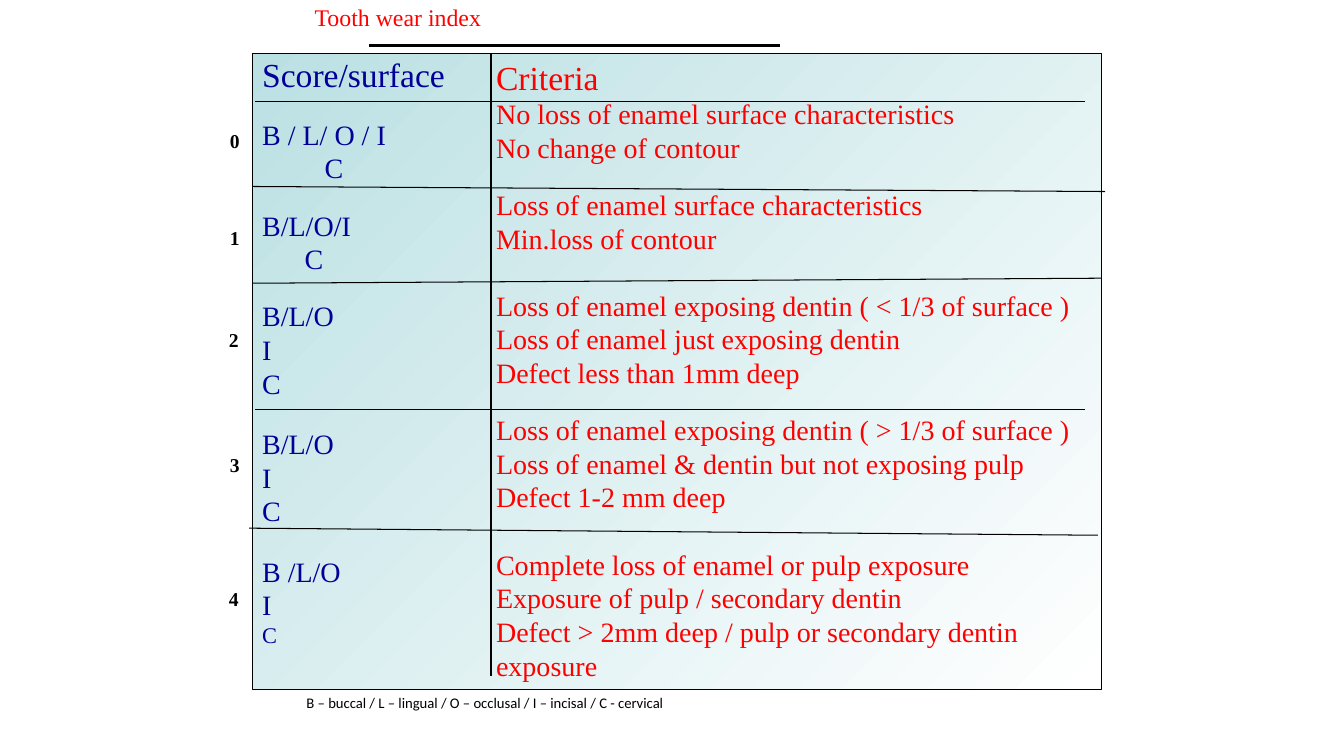
"""Build the tooth wear index slide: scores, surfaces and criteria."""
from dataclasses import dataclass

from lxml import etree
from pptx import Presentation
from pptx.dml.color import RGBColor
from pptx.enum.shapes import MSO_CONNECTOR, MSO_SHAPE
from pptx.enum.text import MSO_ANCHOR, MSO_AUTO_SIZE, PP_ALIGN
from pptx.oxml.ns import qn
from pptx.util import Pt

RECT = MSO_SHAPE.RECTANGLE
STRAIGHT = MSO_CONNECTOR.STRAIGHT
TOP, LEFT, NO_FIT = MSO_ANCHOR.TOP, PP_ALIGN.LEFT, MSO_AUTO_SIZE.NONE
PX = 9144
TWO_CONTENT = 3
LINE_FACTOR = 1.2


@dataclass(frozen=True)
class Theme:
    serif: str = "Times New Roman"
    sans: str = "Calibri"
    red: str = "FF0000"
    navy: str = "000099"
    black: str = "000000"
    tint: str = "BBE0E3"
    white: str = "FFFFFF"
    title: float = 17
    head: float = 24
    body: float = 20
    small: float = 16
    score: float = 14
    note: float = 10.5
    thin: float = 0.75
    thick: float = 2.25


T = Theme()

# Each line is (text, size, gap size before, left indent in px).
TITLE = [("Tooth wear index", T.title, 0, 0)]
SURFACES = [
    ("Score/surface", T.head, 0, 0),
    ("B / L/ O / I", T.body, 14, 0),
    ("C", T.body, 0, 62),
    ("B/L/O/I", T.body, 14, 0),
    ("C", T.body, 0, 42),
    ("B/L/O", T.body, 14, 0),
    ("I", T.body, 0, 0),
    ("C", T.body, 0, 0),
    ("B/L/O", T.body, 16, 0),
    ("I", T.body, 0, 0),
    ("C", T.body, 0, 0),
    ("B /L/O", T.body, 16, 0),
    ("I", T.body, 0, 0),
    ("C", T.small, 0, 0),
]
CRITERIA = [
    ("Criteria", T.head, 0, 0),
    ("No loss of enamel surface characteristics", T.body, 0, 0),
    ("No change of contour", T.body, 0, 0),
    ("Loss of enamel surface characteristics", T.body, 14, 0),
    ("Min.loss of contour", T.body, 0, 0),
    ("Loss of enamel exposing dentin ( < 1/3 of surface )", T.body, 20, 0),
    ("Loss of enamel just exposing dentin", T.body, 0, 0),
    ("Defect less than 1mm deep", T.body, 0, 0),
    ("Loss of enamel exposing dentin ( > 1/3 of surface )", T.body, 14, 0),
    ("Loss of enamel & dentin but not exposing pulp", T.body, 0, 0),
    ("Defect 1-2 mm deep", T.body, 0, 0),
    ("Complete loss of enamel or pulp exposure", T.body, 20, 0),
    ("Exposure of pulp / secondary dentin", T.body, 0, 0),
    ("Defect > 2mm deep / pulp or secondary dentin exposure", T.body, 0, 0),
]
KEY = [("B – buccal / L – lingual / O – occlusal / I – incisal / C - cervical",
        T.note, 0, 0)]
SCORES = [(222, 125), (222, 221), (221, 322), (222, 446), (221, 579)]
RULES = [
    (366, 45, 774, 45, T.thick),
    (487, 53, 487, 671, T.thin),
    (253, 101, 1076, 101, T.thin),
    (251, 185, 1096, 190, T.thin),
    (251, 281, 1092, 276, T.thin),
    (253, 406, 1076, 406, T.thin),
    (247, 524, 1089, 531, T.thin),
]


def rgb(color):
    return RGBColor.from_string(color)


def px(*lengths):
    return [n * PX for n in lengths]


def write(sp, box, lines, color, font=T.serif, bold=False):
    sp.left, sp.top, sp.width, sp.height = px(*box)
    tf = sp.text_frame
    tf.text = "\n".join(line[0] for line in lines)
    tf.word_wrap, tf.auto_size, tf.vertical_anchor = True, NO_FIT, TOP
    tf.margin_left = tf.margin_right = 6 * PX
    tf.margin_top = tf.margin_bottom = 3 * PX
    for p, (_, size, gap, indent) in zip(tf.paragraphs, lines):
        p.alignment = LEFT
        p.line_spacing = Pt(size * LINE_FACTOR)
        p.space_before, p.space_after = Pt(gap * LINE_FACTOR), Pt(0)
        pPr = p._p.get_or_add_pPr()
        pPr.set("marL", str(indent * PX))
        pPr.set("indent", "0")
        etree.SubElement(pPr, qn("a:buNone"))
        f = p.runs[0].font
        f.name, f.size, f.bold = font, Pt(size), bold
        f.color.rgb = rgb(color)


def add_panel(s, box):
    sp = s.shapes.add_shape(RECT, *px(*box))
    sp.shadow.inherit = False
    sp.fill.gradient()
    sp.fill.gradient_angle = 315
    for stop, color in zip(sp.fill.gradient_stops, (T.tint, T.white)):
        stop.color.rgb = rgb(color)
    sp.line.color.rgb = rgb(T.black)
    sp.line.width = Pt(T.thin)
    s.shapes.title.element.addprevious(sp.element)


def add_rule(s, x1, y1, x2, y2, weight):
    line = s.shapes.add_connector(STRAIGHT, *px(x1, y1, x2, y2))
    line.line.color.rgb = rgb(T.black)
    line.line.width = Pt(weight)
    etree.SubElement(line.element.spPr, qn("a:effectLst"))


def add_text(s, box, *args, **kwargs):
    write(s.shapes.add_textbox(*px(*box)), box, *args, **kwargs)


def main():
    prs = Presentation()
    prs.slide_width, prs.slide_height = px(1333, 750)
    s = prs.slides.add_slide(prs.slide_layouts[TWO_CONTENT])
    title, surfaces, criteria = s.placeholders
    add_panel(s, (250, 53, 843, 631))
    write(title, (306, 0, 235, 55), TITLE, T.red)
    write(surfaces, (254, 50, 231, 615), SURFACES, T.navy)
    write(criteria, (486, 53, 604, 638), CRITERIA, T.red)
    add_text(s, (298, 685, 531, 35), KEY, T.black, font=T.sans)
    for rule in RULES:
        add_rule(s, *rule)
    for score, (x, y) in enumerate(SCORES):
        add_text(s, (x, y, 33, 48), [(str(score), T.score, 0, 0)], T.black, bold=True)
    prs.save("out.pptx")


if __name__ == "__main__":
    main()
